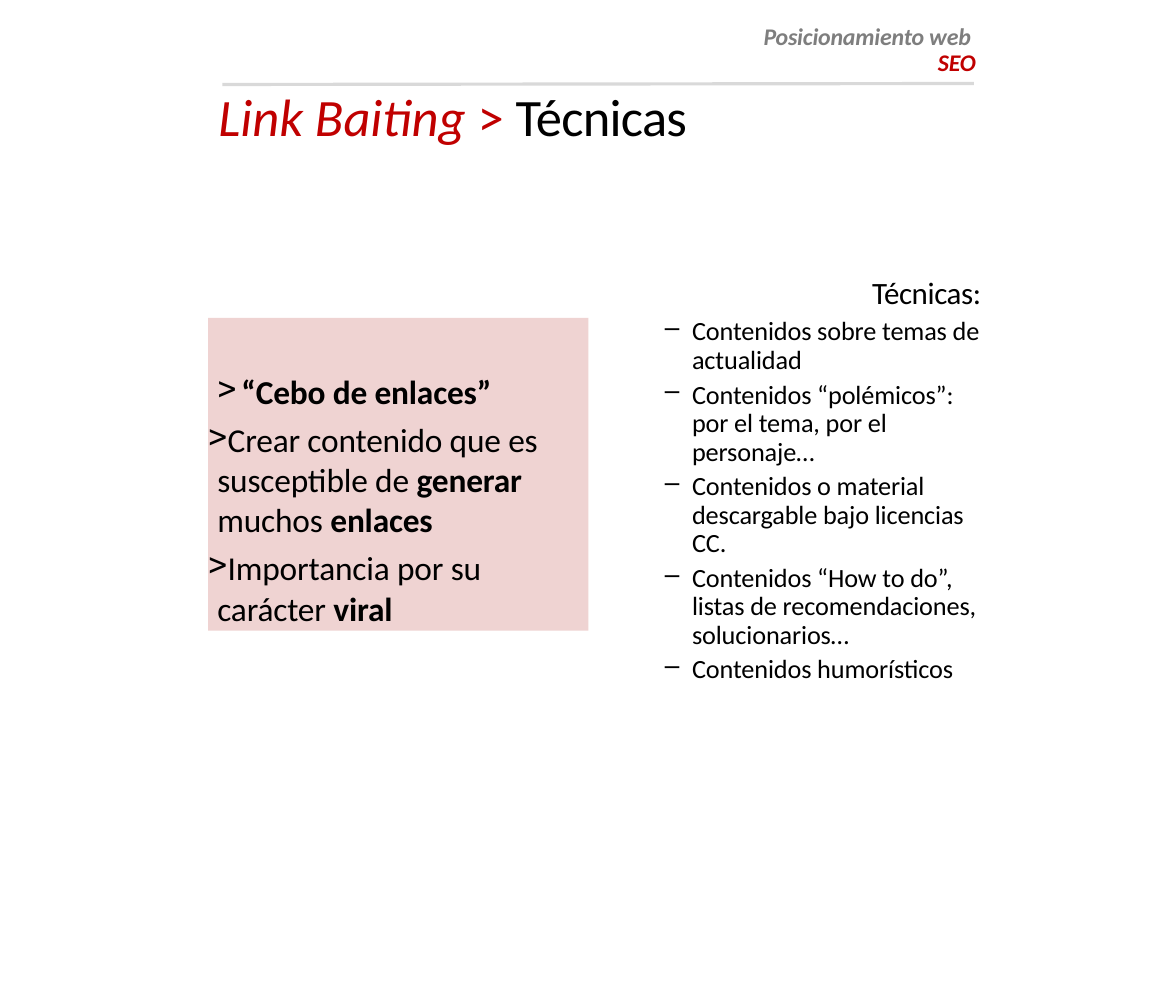
from dataclasses import dataclass

from lxml import etree
from pptx import Presentation
from pptx.dml.color import RGBColor
from pptx.enum.shapes import MSO_CONNECTOR, MSO_SHAPE
from pptx.enum.text import MSO_ANCHOR, MSO_AUTO_SIZE, PP_ALIGN
from pptx.oxml.ns import qn
from pptx.util import Inches, Pt

RECTANGLE = MSO_SHAPE.RECTANGLE
STRAIGHT = MSO_CONNECTOR.STRAIGHT
TOP = MSO_ANCHOR.TOP
NO_AUTOFIT = MSO_AUTO_SIZE.NONE
LEFT, RIGHT = PP_ALIGN.LEFT, PP_ALIGN.RIGHT


@dataclass(frozen=True)
class Theme:
    font: str = "Calibri"
    black: RGBColor = RGBColor(0x00, 0x00, 0x00)
    red: RGBColor = RGBColor(0xC0, 0x00, 0x00)
    gray: RGBColor = RGBColor(0x7E, 0x7E, 0x7E)
    rule: RGBColor = RGBColor(0xD9, 0xD9, 0xD9)
    panel: RGBColor = RGBColor(0xC0, 0x50, 0x4D)
    panel_alpha: int = 25000
    title_size: float = 37.6
    panel_size: float = 23.9
    heading_size: float = 22.2
    list_size: float = 18.8
    header_size: float = 17.1


theme = Theme()


def prepare_frame(shape, top_inset):
    """Clear the insets but the top one and wrap the text from the top."""
    frame = shape.text_frame
    frame.word_wrap = True
    frame.auto_size = NO_AUTOFIT
    frame.vertical_anchor = TOP
    frame.margin_left = frame.margin_right = frame.margin_bottom = 0
    frame.margin_top = Inches(top_inset)
    return frame


def write_paragraph(frame, index, runs, size, before=0, line=None,
                    margin=0, indent=0, bullet=None, align=LEFT):
    """Write runs given as (text, colour, bold, italic, spacing in points)."""
    paragraph = frame.paragraphs[0] if index == 0 else frame.add_paragraph()
    paragraph.alignment = align
    paragraph.space_before = Pt(before)
    if line:
        paragraph.line_spacing = Pt(line)
    for text, color, bold, italic, spacing in runs:
        run = paragraph.add_run()
        run.text = text
        run.font.name = theme.font
        run.font.size = Pt(size)
        run.font.bold, run.font.italic = bold, italic
        run.font.color.rgb = color
        run.font._element.set("spc", str(round(spacing * 100)))
    properties = paragraph._p.get_or_add_pPr()
    properties.set("marL", str(Inches(margin)))
    properties.set("indent", str(Inches(indent)))
    if bullet:
        etree.SubElement(properties, qn("a:buChar")).set("char", bullet)
    else:
        etree.SubElement(properties, qn("a:buNone"))


presentation = Presentation()
presentation.slide_width = Inches(11.69)
presentation.slide_height = Inches(10)
slide = presentation.slides.add_slide(presentation.slide_layouts[5])

# Tinted panel with the definition
panel = slide.shapes.add_shape(
    RECTANGLE, Inches(2.07), Inches(3.16), Inches(3.78), Inches(3.11))
panel.shadow.inherit = False
panel.fill.solid()
panel.fill.fore_color.rgb = theme.panel
panel_color = panel.fill._xPr.find(".//" + qn("a:srgbClr"))
etree.SubElement(panel_color, qn("a:alpha")).set("val", str(theme.panel_alpha))
panel.line.fill.background()

definition = [
    ([("“Cebo de enlaces”", True)], 0, 0.33, -0.24),
    ([("Crear contenido que es susceptible de ", False), ("generar ", True),
      ("muchos ", False), ("enlaces", True)], 5.7, 0.09, -0.09),
    ([("Importancia por su carácter ", False), ("viral", True)],
     5.8, 0.09, -0.09),
]
panel_frame = prepare_frame(panel, 0.53)
for index, (parts, before, margin, indent) in enumerate(definition):
    runs = [(text, theme.black, bold, False, -0.1) for text, bold in parts]
    write_paragraph(panel_frame, index, runs, theme.panel_size, before,
                    margin=margin, indent=indent, bullet=">")

# Techniques list
techniques_box = slide.shapes.add_textbox(
    Inches(6.6), Inches(2.67), Inches(3.2), Inches(4.1))
techniques_frame = prepare_frame(techniques_box, 0.05)
write_paragraph(techniques_frame, 0,
                [("Técnicas:", theme.black, False, False, -0.3)],
                theme.heading_size, 3.9, margin=2.07)
techniques = [
    ("Contenidos sobre temas de actualidad", 5, 20.4),
    ("Contenidos “polémicos”: por el tema, por el personaje…", 4.5, 20.4),
    ("Contenidos o material descargable bajo licencias CC.", 4.4, 20.4),
    ("Contenidos “How to do”, listas de recomendaciones, solucionarios…",
     4.5, 20.4),
    ("Contenidos humorísticos", 1.9, None),
]
for index, (text, before, line) in enumerate(techniques, start=1):
    write_paragraph(techniques_frame, index,
                    [(text, theme.black, False, False, -0.1)],
                    theme.list_size, before, line,
                    margin=0.28, indent=-0.27, bullet="–")

# Header rule
header_rule = slide.shapes.add_connector(
    STRAIGHT, Inches(9.68), Inches(0.83), Inches(2.21), Inches(0.84))
header_rule.line.color.rgb = theme.rule
header_rule.line.width = Pt(2.28)
etree.SubElement(header_rule._element.spPr, qn("a:effectLst"))

# Course header
header = slide.shapes.add_textbox(
    Inches(7.58), Inches(0.23), Inches(2.12), Inches(0.52))
header_frame = prepare_frame(header, 0.01)
write_paragraph(header_frame, 0,
                [("Posicionamiento web", theme.gray, True, True, -0.1)],
                theme.header_size, 0.9, 18.5, margin=0.01)
write_paragraph(header_frame, 1, [("SEO", theme.red, True, True, -0.1)],
                theme.header_size, line=18.5, align=RIGHT)

# Title
title = slide.shapes.title
title.left, title.top = Inches(2.16), Inches(0.82)
title.width, title.height = Inches(4.75), Inches(0.65)
title_runs = [
    ("Link Baiting ", theme.red, False, True, 0),
    ("> ", theme.red, False, False, 0),
    ("Técnicas", theme.black, False, False, -0.5),
]
write_paragraph(prepare_frame(title, 0.01), 0, title_runs,
                theme.title_size, 0.9, margin=0.01)

presentation.save("out.pptx")
